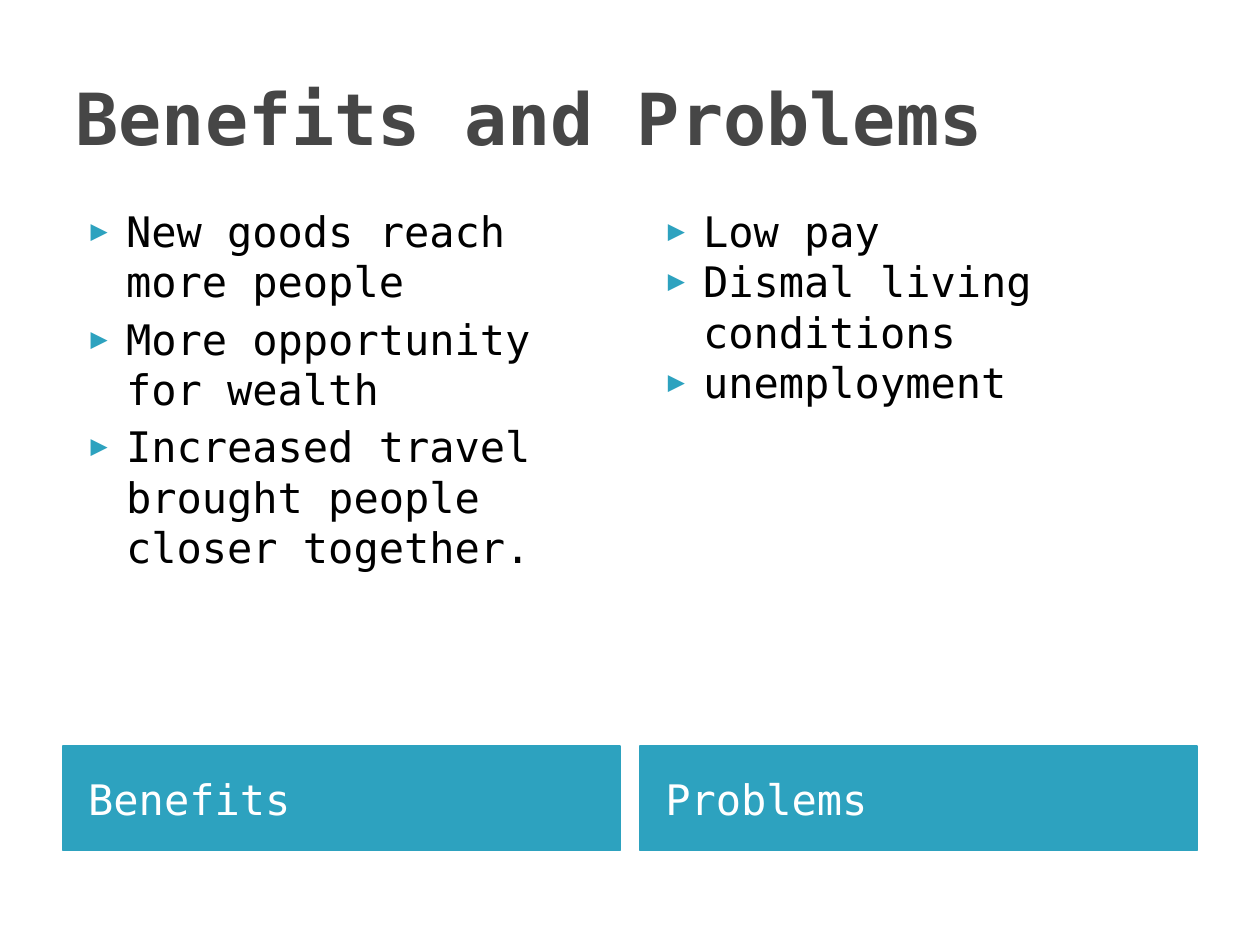
from lxml import etree
from pptx import Presentation
from pptx import util as u
from pptx.dml.color import RGBColor
from pptx.enum import text
from pptx.oxml.ns import qn

PX = 9144  # EMU per px, 100 px to the inch
FACE = "DejaVu Sans Mono"
TEAL = RGBColor(0x2D, 0xA2, 0xBF)
GREY = RGBColor(0x46, 0x46, 0x46)
BLACK = RGBColor(0, 0, 0)
WHITE = RGBColor(0xFF, 0xFF, 0xFF)

LEFT, WIDE, GAP = 50, 900, 16
COL = (WIDE - GAP) // 2

# Heading, points, and the space in points between points
SIDES = [
    ("Benefits", ["New goods reach more people",
                  "More opportunity for wealth",
                  "Increased travel brought people closer together."], 4),
    ("Problems", ["Low pay", "Dismal living conditions", "unemployment"], 0),
]


def place(shape, box, anchor, inset=10):
    for name, val in zip(("left", "top", "width", "height"), box):
        setattr(shape, name, val * PX)
    form = {"word_wrap": True, "auto_size": text.MSO_AUTO_SIZE.NONE,
            "vertical_anchor": anchor, "margin_left": inset * PX,
            "margin_right": 10 * PX, "margin_top": 5 * PX,
            "margin_bottom": 5 * PX}
    for name, val in form.items():
        setattr(shape.text_frame, name, val)


def write(para, words, size, color, bold=False):
    para.alignment = text.PP_ALIGN.LEFT
    run = para.add_run()
    run.text = words
    form = {"name": FACE, "size": u.Pt(size), "bold": bold}
    for name, val in form.items():
        setattr(run.font, name, val)
    run.font.color.rgb = color


def bullet(para):
    props = para._p.get_or_add_pPr()
    props.set("marL", str(40 * PX))
    props.set("indent", str(-28 * PX))
    tint = etree.SubElement(props, qn("a:buClr"))
    etree.SubElement(tint, qn("a:srgbClr"), val=str(TEAL))
    etree.SubElement(props, qn("a:buSzPct"), val="68000")
    etree.SubElement(props, qn("a:buFont"), typeface=FACE)
    etree.SubElement(props, qn("a:buChar"), char="▶")


def title(shape, box):
    place(shape, box, text.MSO_ANCHOR.MIDDLE)
    write(shape.text_frame.paragraphs[0], "Benefits and Problems", 41, GREY, True)


def banner(shape, box, words):
    place(shape, box, text.MSO_ANCHOR.MIDDLE, 20)
    shape.fill.solid()
    shape.fill.fore_color.rgb = TEAL
    shape.line.color.rgb = TEAL
    shape.line.width = u.Pt(0.75)
    para = shape.text_frame.paragraphs[0]
    para.space_before = u.Pt(0)
    write(para, words, 24, WHITE)


def points(shape, box, items, space):
    place(shape, box, text.MSO_ANCHOR.TOP)
    frame = shape.text_frame
    for i, words in enumerate(items):
        para = frame.add_paragraph() if i else frame.paragraphs[0]
        bullet(para)
        para.space_before = u.Pt(space if i else 0)
        write(para, words, 24, BLACK)


def column(slide, box, slot, side):
    x, y, w, h = box
    head, items, space = side
    holders = slide.placeholders
    points(holders[slot + 1], (x, y, w, 431), items, space)
    banner(holders[slot], (x, y + h - 83, w, 83), head)


def main():
    deck = Presentation()
    deck.slide_width, deck.slide_height = 1000 * PX, 750 * PX
    slide = deck.slides.add_slide(deck.slide_layouts.get_by_name("Comparison"))
    title(slide.shapes.title, (LEFT, 30, WIDE, 125))
    for i, side in enumerate(SIDES):
        box = (LEFT + i * (COL + GAP), 158, COL, 517)
        column(slide, box, 1 + 2 * i, side)
    deck.save("out.pptx")


if __name__ == "__main__":
    main()
